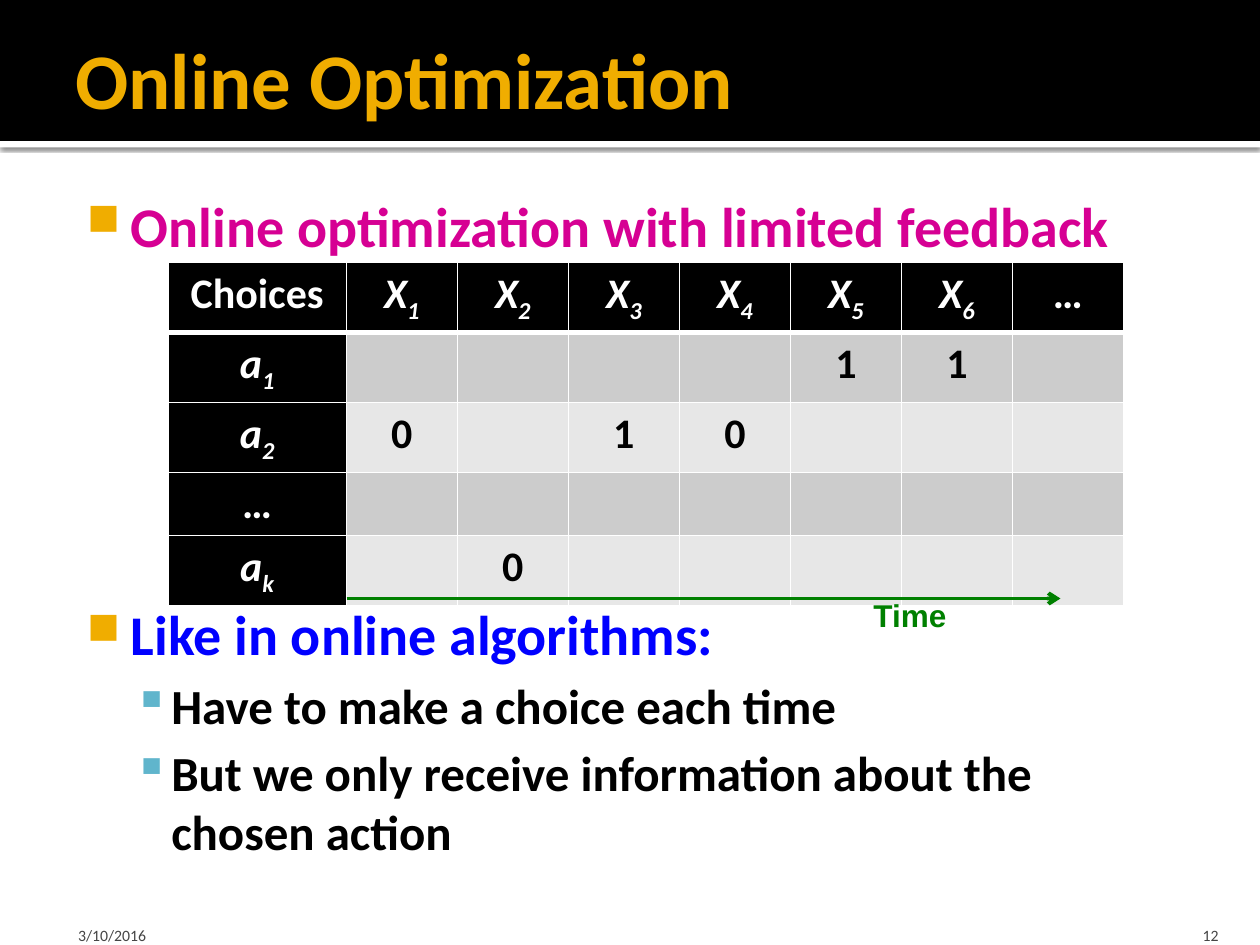
from dataclasses import dataclass

from lxml.etree import SubElement
from pptx import Presentation
from pptx.dml.color import RGBColor
from pptx.enum.shapes import MSO_CONNECTOR, MSO_SHAPE
from pptx.enum.text import MSO_ANCHOR, MSO_AUTO_SIZE, PP_ALIGN
from pptx.oxml import parse_xml
from pptx.oxml.ns import nsdecls, qn
from pptx.util import Pt


@dataclass(frozen=True)
class Theme:
    font: str = "Calibri"
    label_font: str = "Arial"
    black: str = "000000"
    white: str = "FFFFFF"
    gold: str = "F0AD00"
    teal: str = "60B5CC"
    magenta: str = "D60093"
    blue: str = "0000FF"
    green: str = "008000"
    footer: str = "454545"
    bands: tuple = ("CCCCCC", "E7E7E7")
    title_size: float = 45
    topic_size: float = 32
    detail_size: float = 28
    table_size: float = 24
    label_size: float = 18
    footer_size: float = 9


class SlideBuilder:
    def __init__(self, slide, theme):
        self.slide, self.theme = slide, theme

    def style(self, paragraph, size, color, bold=True, italic=False, face=None):
        font = paragraph.font
        font.name, font.size = face or self.theme.font, Pt(size)
        font.bold, font.italic = bold, italic
        font.color.rgb = RGBColor.from_string(color)

    def band(self, top, height, color, shadow=False):
        bar = self.slide.shapes.add_shape(
            MSO_SHAPE.RECTANGLE, 0, Pt(top), Pt(720), Pt(height))
        bar.shadow.inherit = False
        bar.fill.solid()
        bar.fill.fore_color.rgb = RGBColor.from_string(color)
        bar.line.fill.background()
        if shadow:
            effects = bar._element.spPr.find(qn("a:effectLst"))
            effects.append(parse_xml(
                f'<a:outerShdw {nsdecls("a")} blurRad="{Pt(2.5)}" dist="{Pt(0.8)}" '
                'dir="5400000" rotWithShape="0"><a:srgbClr val="000000">'
                '<a:alpha val="60000"/></a:srgbClr></a:outerShdw>'))

    def frame(self, box, insets, anchor=MSO_ANCHOR.TOP, wrap=True):
        text_frame = self.slide.shapes.add_textbox(*map(Pt, box)).text_frame
        (text_frame.margin_left, text_frame.margin_top,
         text_frame.margin_right, text_frame.margin_bottom) = map(Pt, insets)
        text_frame.vertical_anchor, text_frame.word_wrap = anchor, wrap
        return text_frame

    def text(self, box, words, size, color, insets, anchor=MSO_ANCHOR.TOP,
             align=PP_ALIGN.LEFT, bold=True, face=None, wrap=True):
        text_frame = self.frame(box, insets, anchor, wrap)
        if not wrap:
            text_frame.auto_size = MSO_AUTO_SIZE.SHAPE_TO_FIT_TEXT
        paragraph = text_frame.paragraphs[0]
        paragraph.text, paragraph.alignment = words, align
        self.style(paragraph, size, color, bold, face=face)

    def bullets(self, box, insets, items):
        theme = self.theme
        text_frame = self.frame(box, insets)
        for index, (level, words, color, gap) in enumerate(items):
            paragraph = text_frame.paragraphs[0] if index == 0 else text_frame.add_paragraph()
            paragraph.text, paragraph.level = words, level
            size, left, hanging, mark, mark_color, scale = (
                (theme.topic_size, 34.56, 25.2, "■", theme.gold, 80),
                (theme.detail_size, 57.6, 21.6, "▪", theme.teal, 100))[level]
            props = paragraph._p.get_or_add_pPr()
            props.set("marL", str(Pt(left)))
            props.set("indent", str(-Pt(hanging)))
            SubElement(SubElement(props, qn("a:buClr")), qn("a:srgbClr"), val=mark_color)
            SubElement(props, qn("a:buSzPct"), val=str(scale * 1000))
            SubElement(props, qn("a:buChar"), char=mark)
            paragraph.space_before = Pt(gap)
            self.style(paragraph, size, color)

    def cell(self, cell, words, fill, color, borders):
        cell.fill.solid()
        cell.fill.fore_color.rgb = RGBColor.from_string(fill)
        props = cell._tc.get_or_add_tcPr()
        for position, (side, width) in enumerate(borders.items()):
            props.insert(position, parse_xml(
                f'<a:ln{side} {nsdecls("a")} w="{Pt(width)}"><a:solidFill>'
                f'<a:srgbClr val="{self.theme.white}"/></a:solidFill></a:ln{side}>'))
        if not words:
            return
        # An underscore parts a symbol from its subscript
        symbol, _, subscript = words.partition("_")
        paragraph = cell.text_frame.paragraphs[0]
        paragraph.alignment = PP_ALIGN.CENTER
        paragraph.add_run().text = symbol
        if subscript:
            run = paragraph.add_run()
            run.text = subscript
            run._r.get_or_add_rPr().set("baseline", "-25000")
        self.style(paragraph, self.theme.table_size, color, italic=bool(subscript))

    def table(self, box, widths, row_height, rows):
        theme = self.theme
        grid = self.slide.shapes.add_table(len(rows), len(widths), *map(Pt, box)).table
        for column, width in zip(grid.columns, widths):
            column.width = Pt(width)
        for r, row in enumerate(rows):
            grid.rows[r].height = Pt(row_height)
            borders = {"L": 1, "R": 1, "T": 3 if r == 1 else 1, "B": 3 if r == 0 else 1}
            for c, words in enumerate(row):
                heading = r == 0 or c == 0
                fill = theme.black if heading else theme.bands[(r - 1) % 2]
                color = theme.white if heading else theme.black
                self.cell(grid.cell(r, c), words, fill, color, borders)

    def arrow(self, start, end, color, width):
        line = self.slide.shapes.add_connector(
            MSO_CONNECTOR.STRAIGHT, *map(Pt, (*start, *end)))
        line.line.color.rgb = RGBColor.from_string(color)
        line.line.width = Pt(width)
        SubElement(line.line._get_or_add_ln(), qn("a:tailEnd"), type="arrow")
        SubElement(line._element.spPr, qn("a:effectLst"))


def main():
    deck = Presentation()
    deck.slide_width, deck.slide_height = Pt(720), Pt(540)
    theme = Theme()
    page = SlideBuilder(deck.slides.add_slide(deck.slide_layouts[6]), theme)

    # Title band
    page.band(80.6, 3.6, theme.white, shadow=True)
    page.band(0, 80.6, theme.black)
    page.text((36, 5.8, 648, 77.8), "Online Optimization", theme.title_size, theme.gold,
              (7.2, 3.6, 3.6, 3.6), MSO_ANCHOR.MIDDLE)

    # Bullets, with room for the table after the first
    page.bullets((36, 102.2, 648, 414), (4.3, 7.2, 7.2, 3.6), [
        (0, "Online optimization with limited feedback", theme.magenta, 0),
        (0, "Like in online algorithms:", theme.blue, 195),
        (1, "Have to make a choice each time", theme.black, 4.7),
        (1, "But we only receive information about the chosen action", theme.black, 4.7),
    ])

    # Date and page number
    page.text((36, 518.4, 168, 21.6), "3/10/2016", theme.footer_size, theme.footer,
              (8.64, 3.6, 3.6, 0), MSO_ANCHOR.BOTTOM, bold=False)
    page.text((645.8, 518.4, 57.6, 21.6), "12", theme.footer_size, theme.footer,
              (7.2, 3.6, 7.2, 0), MSO_ANCHOR.BOTTOM, PP_ALIGN.RIGHT, bold=False)

    # Feedback seen for each choice over time
    page.table((96, 150, 546, 180), [101.9] + [63.45] * 7, 29.2, [
        ["Choices", *(f"X_{step}" for step in range(1, 7)), "…"],
        ["a_1", "", "", "", "", "1", "1", ""],
        ["a_2", "0", "", "1", "0", "", "", ""],
        ["…"] + [""] * 7,
        ["a_k", "", "0", "", "", "", "", ""],
    ])

    # Time axis
    page.arrow((198, 342), (606, 342), theme.green, 2.25)
    page.text((492, 337, 57, 29), "Time", theme.label_size, theme.green,
              (7.2, 3.6, 7.2, 3.6), face=theme.label_font, wrap=False)

    deck.save("out.pptx")


if __name__ == "__main__":
    main()
